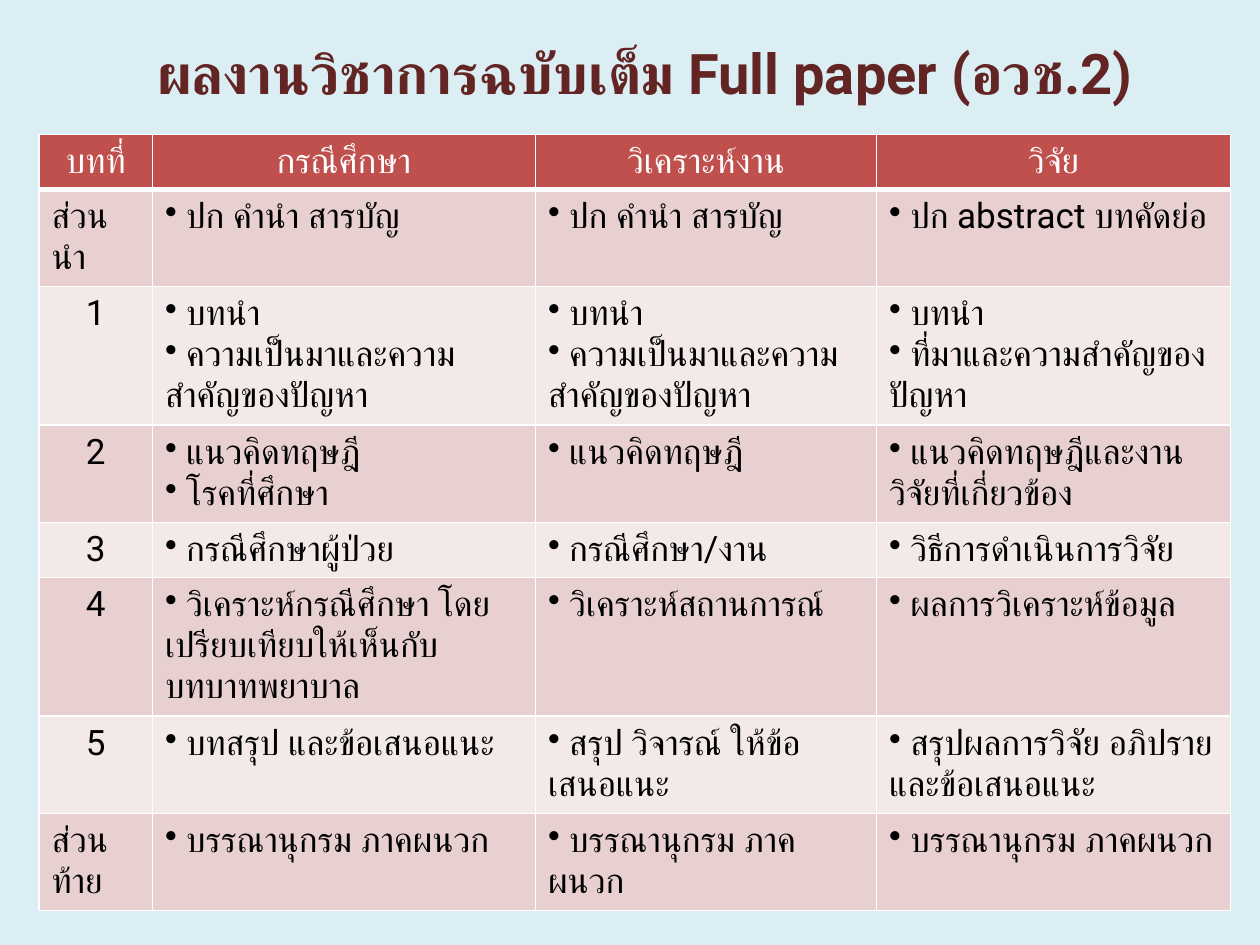
from lxml.etree import SubElement
from pptx import Presentation
from pptx.dml.color import RGBColor
from pptx.enum.text import MSO_ANCHOR, PP_ALIGN
from pptx.oxml.ns import qn
from pptx.util import Pt

FONT = "Roboto"
SKY = RGBColor(0xDB, 0xEE, 0xF4)
MAROON = RGBColor(0x63, 0x25, 0x23)
RED = RGBColor(0xC0, 0x50, 0x4D)
ROSE = RGBColor(0xE8, 0xD0, 0xD0)
BLUSH = RGBColor(0xF4, 0xE9, 0xE9)
WHITE = RGBColor(0xFF, 0xFF, 0xFF)
BLACK = RGBColor(0, 0, 0)

COLUMN_WIDTHS = [64.8, 218.9, 194.9, 202.2]
ROW_HEIGHTS = [30.2, 55.5, 79.3, 55.5, 31.5, 79.3, 55.5, 55.5]
# One tuple per row; each cell after the first lists its bullets, one a line.
CHAPTERS = [
    ("บทที่", "กรณีศึกษา", "วิเคราะห์งาน", "วิจัย"),
    ("ส่วนนำ", "ปก คำนำ สารบัญ", "ปก คำนำ สารบัญ", "ปก abstract บทคัดย่อ"),
    ("1", "บทนำ\nความเป็นมาและความสำคัญของปัญหา",
     "บทนำ\nความเป็นมาและความสำคัญของปัญหา",
     "บทนำ\nที่มาและความสำคัญของปัญหา"),
    ("2", "แนวคิดทฤษฎี\nโรคที่ศึกษา", "แนวคิดทฤษฎี",
     "แนวคิดทฤษฎีและงานวิจัยที่เกี่ยวข้อง"),
    ("3", "กรณีศึกษาผู้ป่วย", "กรณีศึกษา/งาน", "วิธีการดำเนินการวิจัย"),
    ("4", "วิเคราะห์กรณีศึกษา โดยเปรียบเทียบให้เห็นกับบทบาทพยาบาล",
     "วิเคราะห์สถานการณ์", "ผลการวิเคราะห์ข้อมูล"),
    ("5", "บทสรุป และข้อเสนอแนะ", "สรุป วิจารณ์ ให้ข้อเสนอแนะ",
     "สรุปผลการวิจัย อภิปราย และข้อเสนอแนะ"),
    ("ส่วนท้าย",) + ("บรรณานุกรม ภาคผนวก",) * 3,
]


def style_paragraph(paragraph, size, color, bold=False):
    """Set the font for both Latin and Thai text."""
    font = paragraph.font
    font.name, font.size, font.bold = FONT, Pt(size), bold
    font.color.rgb = color
    defaults = paragraph._p.pPr.find(qn("a:defRPr"))
    SubElement(defaults, qn("a:cs"), typeface=FONT)


def add_border(cell, side, width):
    line = SubElement(cell._tc.get_or_add_tcPr(), qn(f"a:ln{side}"), w=str(Pt(width)))
    fill = SubElement(line, qn("a:solidFill"))
    SubElement(fill, qn("a:srgbClr"), val=str(WHITE))


prs = Presentation()
prs.slide_width, prs.slide_height = Pt(720), Pt(540)
slide = prs.slides.add_slide(prs.slide_layouts[6])
slide.background.fill.solid()
slide.background.fill.fore_color.rgb = SKY

title = slide.shapes.add_textbox(Pt(44.6), Pt(16.6), Pt(648), Pt(49)).text_frame
title.word_wrap = True
title.vertical_anchor = MSO_ANCHOR.MIDDLE
heading = title.paragraphs[0]
heading.text = "ผลงานวิชาการฉบับเต็ม Full paper (อวช.2)"
heading.alignment = PP_ALIGN.CENTER
style_paragraph(heading, 32, MAROON, bold=True)

chapters = slide.shapes.add_table(
    len(ROW_HEIGHTS), len(COLUMN_WIDTHS), Pt(22.3), Pt(77),
    Pt(sum(COLUMN_WIDTHS)), Pt(sum(ROW_HEIGHTS))).table
for column, width in zip(chapters.columns, COLUMN_WIDTHS):
    column.width = Pt(width)
for row, height in zip(chapters.rows, ROW_HEIGHTS):
    row.height = Pt(height)

for r, entries in enumerate(CHAPTERS):
    is_header = r == 0
    for c, entry in enumerate(entries):
        cell = chapters.cell(r, c)
        for side in "LRTB":
            add_border(cell, side, 3 if is_header and side == "B" else 1)
        cell.fill.solid()
        cell.fill.fore_color.rgb = RED if is_header else ROSE if r % 2 else BLUSH

        is_bulleted = c > 0 and not is_header
        cell.text = "\n".join(" " + item for item in entry.split("\n")) if is_bulleted else entry
        for paragraph in cell.text_frame.paragraphs:
            if is_bulleted:
                SubElement(paragraph._p.get_or_add_pPr(), qn("a:buChar"), char="•")
            elif is_header or entry.isdigit():
                paragraph.alignment = PP_ALIGN.CENTER
            style_paragraph(paragraph, 20, WHITE if is_header else BLACK)

prs.save("out.pptx")
